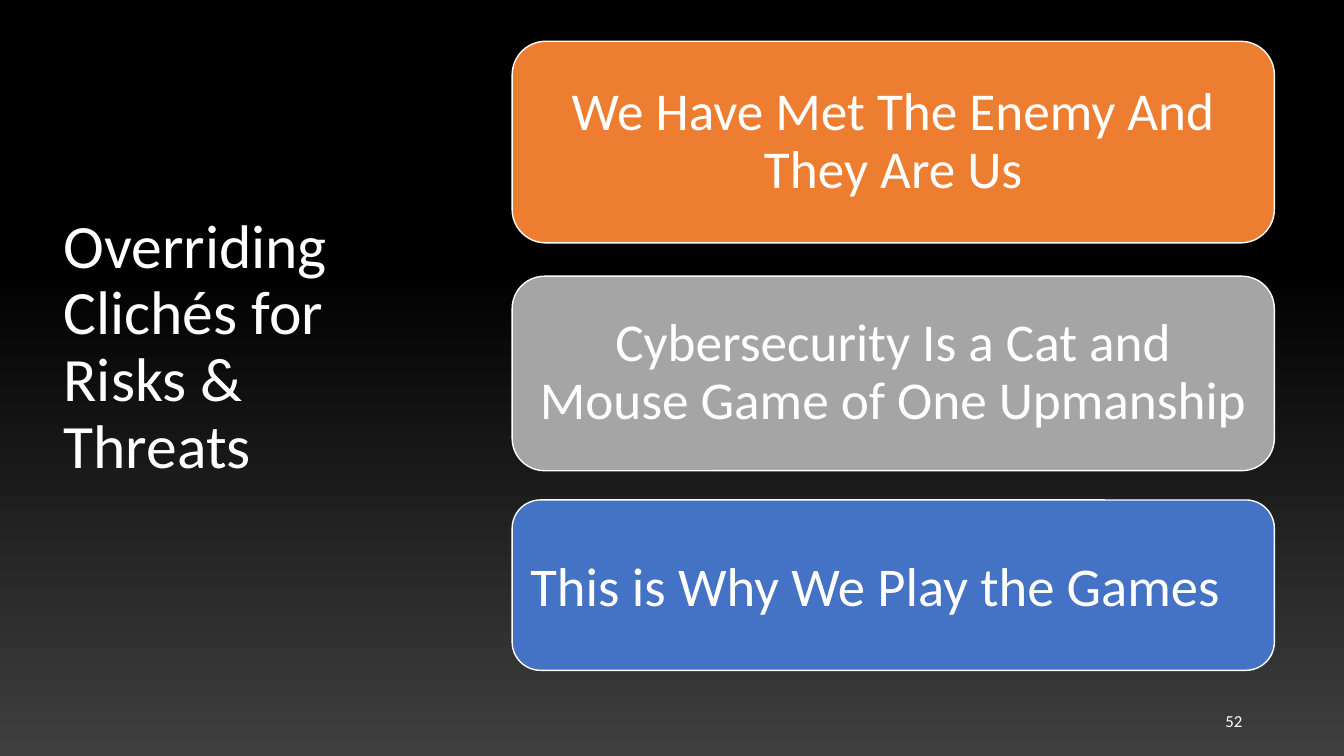
from dataclasses import dataclass

from pptx import Presentation
from pptx.dml.color import RGBColor
from pptx.enum.shapes import MSO_SHAPE
from pptx.enum.text import MSO_ANCHOR, MSO_AUTO_SIZE, PP_ALIGN
from pptx.slide import Slide
from pptx.text.text import TextFrame
from pptx.util import Inches, Pt

FONT = "Calibri"
WHITE = "FFFFFF"
CARD_LEFT, CARD_WIDTH = 5.08, 7.56


@dataclass(frozen=True)
class Card:
    text: str
    top: float
    height: float
    fill: str
    size: int = 38
    align: PP_ALIGN = PP_ALIGN.CENTER
    inset: float = 0.16
    line_spacing: float = 0.9


CARDS = [
    Card("We Have Met The Enemy And They Are Us", 0.41, 2, "ED7D31"),
    Card("Cybersecurity Is a Cat and Mouse Game of One Upmanship",
         2.74, 1.93, "A5A5A5"),
    Card("This is Why We Play the Games", 4.96, 1.69, "4472C4",
         size=39, align=PP_ALIGN.LEFT, inset=0.1, line_spacing=1.0),
]


def color(hex_code: str) -> RGBColor:
    return RGBColor.from_string(hex_code)


def write(frame: TextFrame, text: str, size: int, align: PP_ALIGN,
          line_spacing: float = 1.0) -> None:
    frame.text = text
    frame.word_wrap = True
    frame.auto_size = MSO_AUTO_SIZE.NONE
    frame.vertical_anchor = MSO_ANCHOR.MIDDLE
    paragraph = frame.paragraphs[0]
    paragraph.alignment = align
    paragraph.line_spacing = line_spacing
    for run in paragraph.runs:
        run.font.name = FONT
        run.font.size = Pt(size)
        run.font.color.rgb = color(WHITE)


def paint_background(slide: Slide) -> None:
    fill = slide.background.fill
    fill.gradient()
    fill.gradient_angle = 90
    for stop, (position, shade) in zip(fill.gradient_stops,
                                       [(0, "3F3F3F"), (0.65, "000000")]):
        stop.position = position
        stop.color.rgb = color(shade)


def draw_card(slide: Slide, card: Card) -> None:
    panel = slide.shapes.add_shape(
        MSO_SHAPE.ROUNDED_RECTANGLE, Inches(CARD_LEFT), Inches(card.top),
        Inches(CARD_WIDTH), Inches(card.height))
    panel.shadow.inherit = False
    panel.fill.solid()
    panel.fill.fore_color.rgb = color(card.fill)
    panel.line.color.rgb = color(WHITE)
    panel.line.width = Pt(1)
    frame = panel.text_frame
    frame.margin_left = frame.margin_right = Inches(card.inset)
    frame.margin_top = frame.margin_bottom = Inches(card.inset)
    write(frame, card.text, card.size, card.align, card.line_spacing)


def main() -> None:
    deck = Presentation()
    deck.slide_width, deck.slide_height = Inches(13.33), Inches(7.5)
    slide = deck.slides.add_slide(deck.slide_layouts.get_by_name("Title Only"))
    paint_background(slide)

    # Title
    title = slide.shapes.title
    title.left, title.top = Inches(0.53), Inches(0.69)
    title.width, title.height = Inches(3.86), Inches(5.53)
    write(title.text_frame, "Overriding Clichés for Risks & Threats", 44,
          PP_ALIGN.LEFT, 0.9)

    # Cliché cards
    for card in CARDS:
        draw_card(slide, card)

    # Page number
    page_number = slide.shapes.add_textbox(
        Inches(9.42), Inches(6.95), Inches(3), Inches(0.4))
    write(page_number.text_frame, "52", 12, PP_ALIGN.RIGHT)

    deck.save("out.pptx")


if __name__ == "__main__":
    main()
